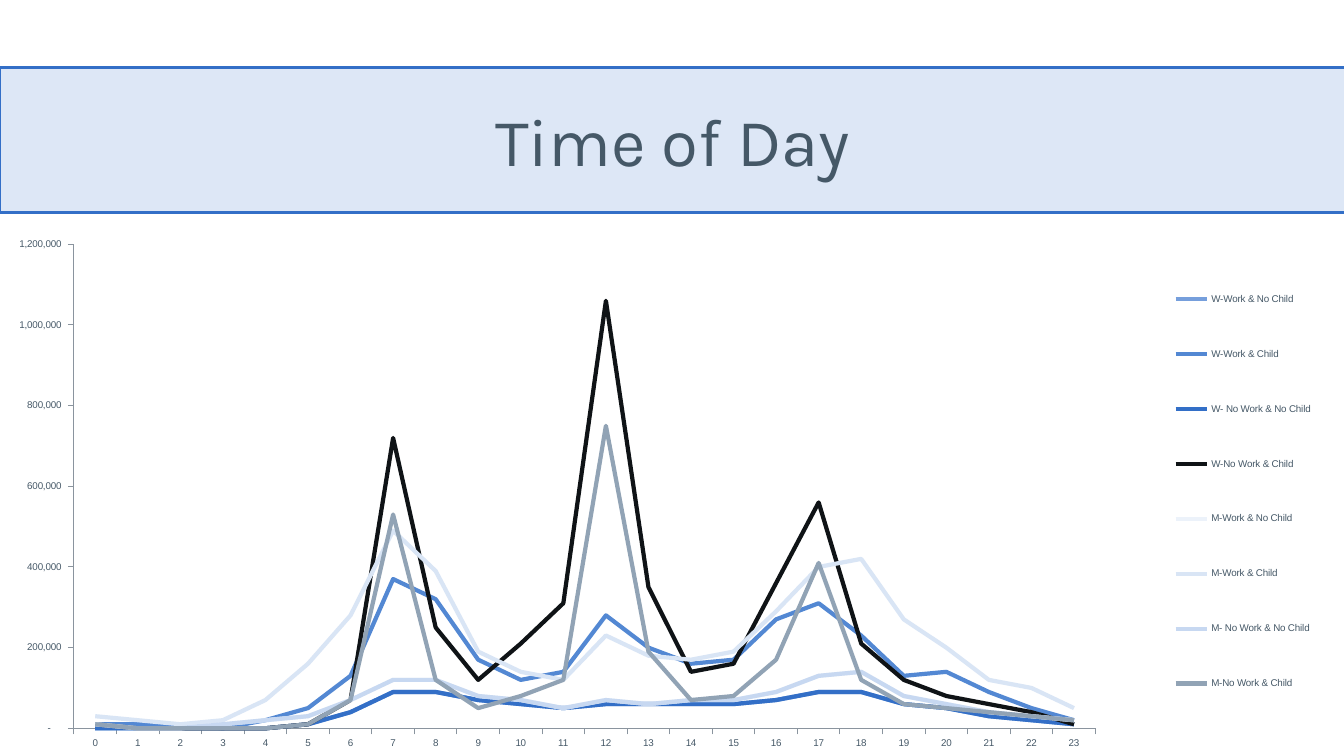
from dataclasses import dataclass
from typing import Any

from lxml import etree
from pptx import Presentation
from pptx import oxml
from pptx import util as u
from pptx.chart import data as cd
from pptx.dml import color as dc
from pptx.enum import chart as ec
from pptx.enum import text as et
from pptx.oxml import ns

INK = "455867"
BLUE = "336FC7"
PALE = "C7D8F1"
AXIS = "8A949E"
STEP = 10000
NUMS = '_(* #,##0_);_(* \\(#,##0\\);_(* "-"??_);_(@_)'


@dataclass
class Group:
    name: str
    color: str
    vals: list[int]


W_HOME = [0, 0, 0, 0, 0, 1, 4, 9, 9, 7, 6, 5, 6, 6, 6, 6, 7, 9, 9, 6, 5, 3, 2, 1]
M_HOME = [1, 0, 0, 1, 2, 3, 7, 12, 12, 8, 7, 5, 7, 6, 7, 7, 9, 13, 14, 8, 6, 4, 3, 2]

GROUPS = [
    Group("W-Work & No Child", "769FDC", W_HOME),
    Group("W-Work & Child", "5388D3",
          [1, 1, 1, 0, 2, 5, 13, 37, 32, 17, 12, 14,
           28, 20, 16, 17, 27, 31, 23, 13, 14, 9, 5, 2]),
    Group("W- No Work & No Child", BLUE, W_HOME),
    Group("W-No Work & Child", "0F1316",
          [1, 0, 0, 0, 0, 1, 7, 72, 25, 12, 21, 31,
           106, 35, 14, 16, 36, 56, 21, 12, 8, 6, 4, 1]),
    Group("M-Work & No Child", "ECF2FA", M_HOME),
    Group("M-Work & Child", "D9E5F5",
          [3, 2, 1, 2, 7, 16, 28, 49, 39, 19, 14, 12,
           23, 18, 17, 19, 29, 40, 42, 27, 20, 12, 10, 5]),
    Group("M- No Work & No Child", PALE, M_HOME),
    Group("M-No Work & Child", "91A3B5",
          [1, 0, 0, 0, 0, 1, 7, 53, 12, 5, 8, 12,
           75, 19, 7, 8, 17, 41, 12, 6, 5, 4, 3, 2]),
]


def paint(fmt: Any, color: str) -> None:
    fmt.solid()
    fmt.fore_color.rgb = dc.RGBColor.from_string(color)


def stroke(line: Any, color: str, width: float) -> None:
    paint(line.fill, color)
    line.width = u.Pt(width)


def apply(item: Any, vals: dict[str, Any]) -> None:
    for key, val in vals.items():
        setattr(item, key, val)


def write(font: Any, name: str, size: float) -> None:
    apply(font, {"name": name, "size": u.Pt(size), "bold": False})
    paint(font.fill, INK)


def place(node: Any, spot: int, box: dict[str, float], inner: bool) -> None:
    for old in node.findall(ns.qn("c:layout")):
        node.remove(old)
    area = oxml.parse_xml(f"<c:layout {ns.nsdecls('c')}><c:manualLayout/></c:layout>")
    rows = [("layoutTarget", "inner")] if inner else []
    rows += [("xMode", "edge"), ("yMode", "edge"), *box.items()]
    for tag, val in rows:
        etree.SubElement(area[0], ns.qn(f"c:{tag}")).set("val", str(val))
    node.insert(spot, area)


def add_title(slide: Any) -> None:
    title = slide.shapes.title
    apply(title, {"left": u.Pt(0), "top": u.Pt(48),
                  "width": u.Pt(961), "height": u.Pt(104)})
    paint(title.fill, PALE)
    tint = title.fill._xPr.find(".//" + ns.qn("a:srgbClr"))
    etree.SubElement(tint, ns.qn("a:alpha")).set("val", "60000")
    stroke(title.line, BLUE, 2)
    title.text_frame.text = "Time of Day"
    title.text_frame.vertical_anchor = et.MSO_ANCHOR.MIDDLE
    para = title.text_frame.paragraphs[0]
    para.alignment = et.PP_ALIGN.CENTER
    write(para.runs[0].font, "Karla", 48)


def add_lines(slide: Any) -> None:
    data = cd.CategoryChartData(number_format="#,##0")
    data.categories = [str(hour) for hour in range(24)]
    for group in GROUPS:
        data.add_series(group.name, [val * STEP for val in group.vals])
    frame = slide.shapes.add_chart(ec.XL_CHART_TYPE.LINE, u.Pt(0), u.Pt(138),
                                   u.Pt(960), u.Pt(402), data)
    chart = frame.chart
    apply(chart, {"has_title": False, "has_legend": True})
    write(chart.font, "Arial", 7)
    clear = f"<c:spPr {ns.nsdecls('c', 'a')}><a:noFill/><a:ln><a:noFill/></a:ln></c:spPr>"
    chart._chartSpace.find(ns.qn("c:chart")).addnext(oxml.parse_xml(clear))

    plot = chart.plots[0]
    plot.vary_by_categories = False
    for line, group in zip(plot.series, GROUPS):
        line.smooth = False
        line.marker.style = ec.XL_MARKER_STYLE.NONE
        stroke(line.format.line, group.color, 3)

    for axis in (chart.category_axis, chart.value_axis):
        apply(axis, {"has_major_gridlines": False,
                     "major_tick_mark": ec.XL_TICK_MARK.OUTSIDE,
                     "minor_tick_mark": ec.XL_TICK_MARK.NONE})
        stroke(axis.format.line, AXIS, 0.75)
    apply(chart.value_axis, {"minimum_scale": 0, "maximum_scale": 1200000,
                             "major_unit": 200000})
    apply(chart.value_axis.tick_labels,
          {"number_format": NUMS, "number_format_is_linked": False})

    apply(chart.legend, {"position": ec.XL_LEGEND_POSITION.RIGHT,
                         "include_in_layout": False})
    area = chart._chartSpace.find(".//" + ns.qn("c:plotArea"))
    key = chart._chartSpace.find(".//" + ns.qn("c:legend"))
    place(area, 0, {"x": 0.055, "y": 0.091, "w": 0.76, "h": 0.86}, True)
    place(key, 1, {"x": 0.86, "y": 0.1, "w": 0.13, "h": 0.86}, False)


def main() -> None:
    deck = Presentation()
    apply(deck, {"slide_width": u.Pt(960), "slide_height": u.Pt(540)})
    slide = deck.slides.add_slide(deck.slide_layouts[5])
    add_title(slide)
    add_lines(slide)
    deck.save("out.pptx")


if __name__ == "__main__":
    main()
